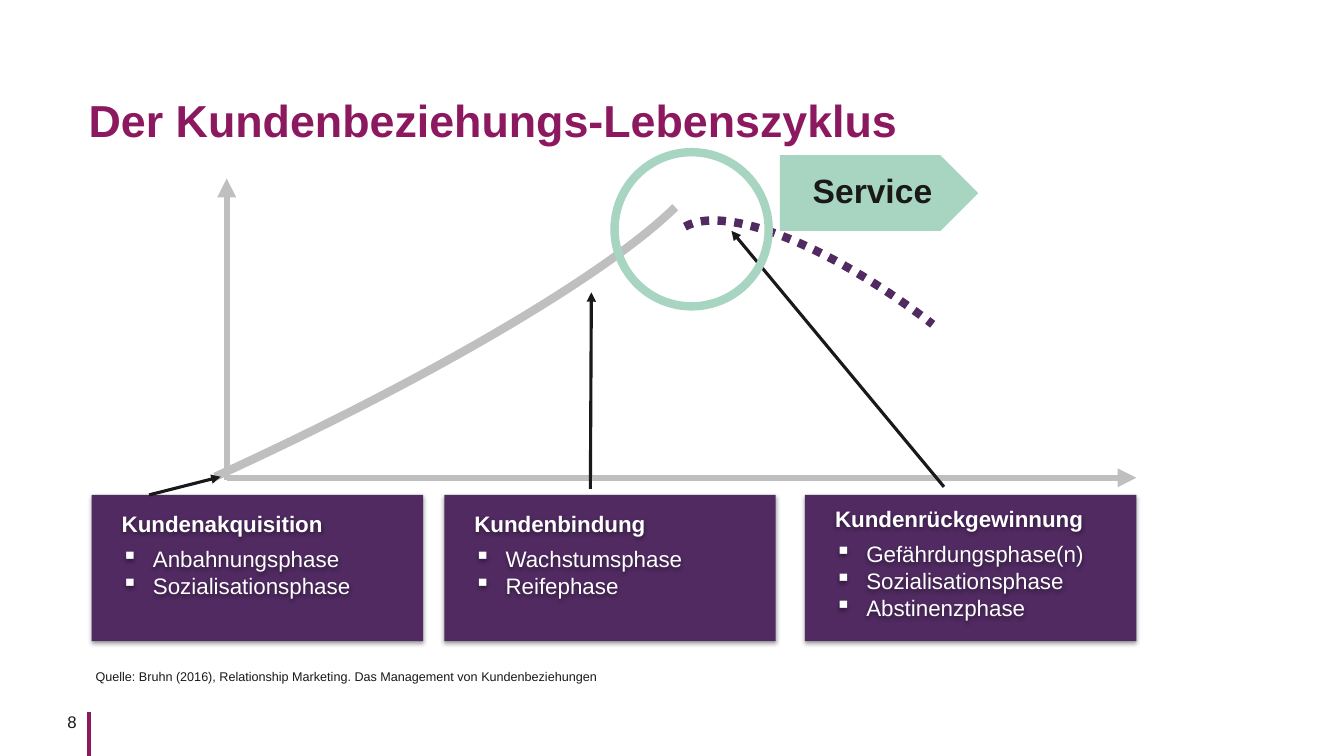
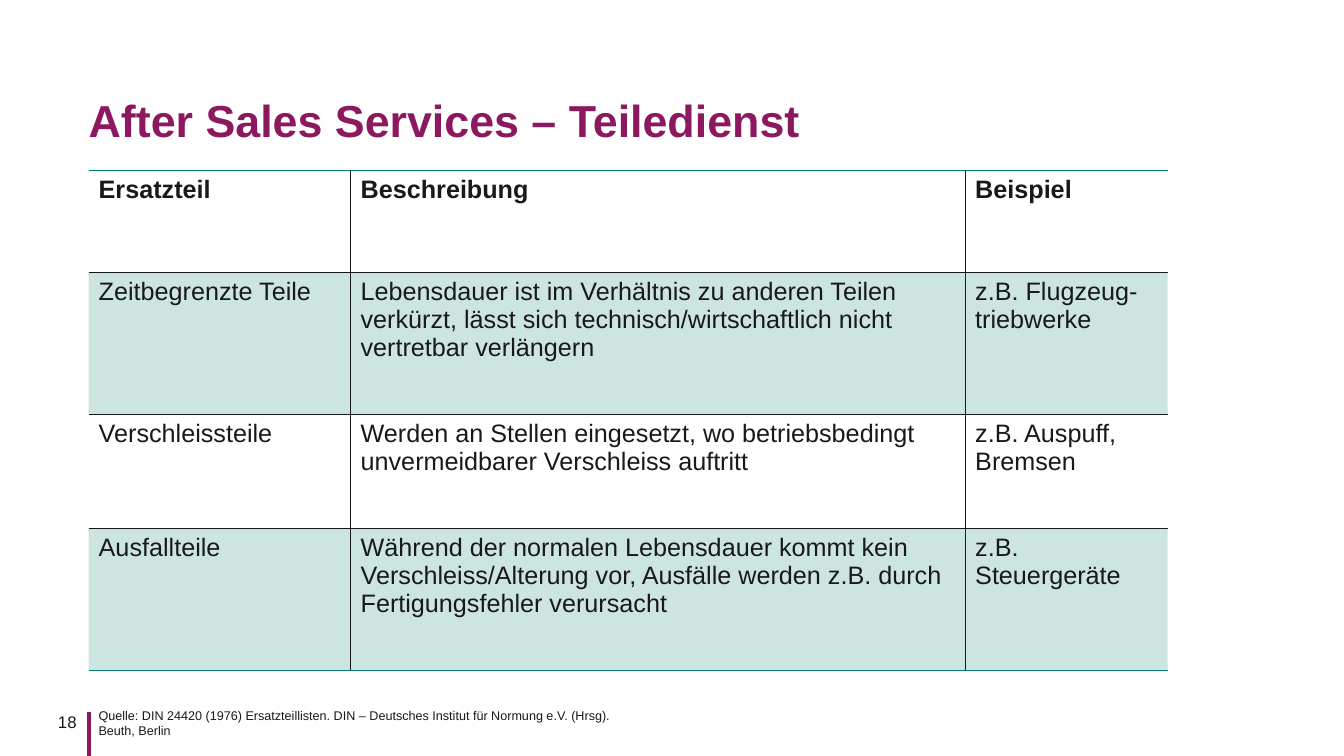
import pptx
import pptx.util
import pptx.dml.color
import pptx.enum.dml
import pptx.enum.shapes
import pptx.enum.text
import pptx.oxml
import pptx.oxml.ns

WIDTH, HEIGHT = 13.34, 7.5
COLUMN = ROW = pptx.util.Inches(1)
LEFT = 0.88
FONT = "Arial"
BERRY, PLUM, MINT, TEAL = "8C195F", "502A61", "A7D5C2", "007E6B"
INK, GREY, WHITE = "191919", "BFBFBF", "FFFFFF"
SHAPES = pptx.enum.shapes.MSO_SHAPE
ALIGN = pptx.enum.text.PP_ALIGN
ANCHOR = pptx.enum.text.MSO_ANCHOR
NO_INSETS = dict(margin_left=0, margin_top=0, margin_right=0, margin_bottom=0)

CARD_TOP, CARD_WIDTH, CARD_HEIGHT = 4.91, 3.29, 1.45
CARDS = [
    (0.91, 0.1, "Kundenakquisition", ["Anbahnungsphase", "Sozialisationsphase"]),
    (4.41, 0.1, "Kundenbindung", ["Wachstumsphase", "Reifephase"]),
    (7.99, 0.05, "Kundenrückgewinnung",
     ["Gefährdungsphase(n)", "Sozialisationsphase", "Abstinenzphase"]),
]
AXES = [((2.25, 4.74), (11.28, 4.74)), ((2.25, 4.76), (2.25, 1.77))]
POINTERS = [((1.48, 4.91), (2.19, 4.73)), ((5.86, 4.85), (5.87, 2.9)),
            ((9.37, 4.83), (7.26, 2.29))]
PARTS_COLUMNS = [2.6, 6.1, 2.01]
PARTS_ROWS = [1.01, 1.41, 1.13, 1.41]
PARTS = [
    ("Ersatzteil", "Beschreibung", "Beispiel"),
    ("Zeitbegrenzte Teile",
     "Lebensdauer ist im Verhältnis zu anderen Teilen verkürzt, lässt sich "
     "technisch/wirtschaftlich nicht vertretbar verlängern",
     "z.B. Flugzeug-triebwerke"),
    ("Verschleissteile",
     "Werden an Stellen eingesetzt, wo betriebsbedingt unvermeidbarer Verschleiss auftritt",
     "z.B. Auspuff, Bremsen"),
    ("Ausfallteile",
     "Während der normalen Lebensdauer kommt kein Verschleiss/Alterung vor, "
     "Ausfälle werden z.B. durch Fertigungsfehler verursacht",
     "z.B. Steuergeräte"),
]


def colour(value):
    """Return the colour of a hex string."""
    return pptx.dml.color.RGBColor.from_string(value)


def place(left, top, width, height):
    """Turn grid columns and rows into slide lengths."""
    return [round(left * COLUMN), round(top * ROW), round(width * COLUMN), round(height * ROW)]


def apply(target, **values):
    """Set every given format value on the target."""
    for name, value in values.items():
        setattr(target, name, value)


def add_xml(parent, markup):
    """Append a drawing element written without its namespace."""
    tag, _, rest = markup.partition(" ")
    element = pptx.oxml.parse_xml(f"<a:{tag} {pptx.oxml.ns.nsdecls('a')} {rest}")
    parent.append(element)
    return element


def write(para, text, size, ink=INK, bold=False, **values):
    """Put one formatted run of text into a paragraph."""
    apply(para, **values)
    span = para.add_run()
    span.text = text
    apply(span.font, name=FONT, size=pptx.util.Pt(size), bold=bold)
    span.font.color.rgb = colour(ink)


def add_text(page, at, **frame_values):
    """Add a wrapping text box."""
    box = page.shapes.add_textbox(*place(*at))
    apply(box.text_frame, word_wrap=True, **frame_values)
    return box


def add_figure(page, kind, at, fill=None, line=None, rotation=0, adjust=()):
    """Add a preset shape with a plain fill or a six point outline."""
    shape = page.shapes.add_shape(kind, *place(*at))
    apply(shape, rotation=rotation)
    shape.shadow.inherit = False
    for index, value in enumerate(adjust):
        shape.adjustments[index] = value
    if fill:
        shape.fill.solid()
        shape.fill.fore_color.rgb = colour(fill)
    else:
        shape.fill.background()
    if line:
        shape.line.color.rgb = colour(line)
        shape.line.width = pptx.util.Pt(6)
    else:
        shape.line.fill.background()
    return shape


def add_line(page, start, end, ink, weight, arrow=True):
    """Add a straight line, with an arrowhead at its end if wanted."""
    straight = pptx.enum.shapes.MSO_CONNECTOR.STRAIGHT
    line = page.shapes.add_connector(straight, *place(*start, *end))
    line.line.color.rgb = colour(ink)
    line.line.width = pptx.util.Pt(weight)
    if arrow:
        add_xml(line.line._get_or_add_ln(), 'tailEnd type="triangle"/>')
    add_xml(line._element.spPr, "effectLst />")


def add_shadow(shape):
    """Give a shape a soft shadow below it."""
    shape.shadow.inherit = False
    effects = shape._element.spPr.find(pptx.oxml.ns.qn("a:effectLst"))
    add_xml(effects, 'outerShdw blurRad="39370" dist="20320" dir="5400000" rotWithShape="0">'
                     '<a:srgbClr val="000000"><a:alpha val="38000"/></a:srgbClr></a:outerShdw>')


def add_page(deck, title, number):
    """Add a slide with its title, page number and footer mark."""
    page = deck.slides.add_slide(deck.slide_layouts[5])
    heading = page.shapes.title
    left, top, width, height = place(LEFT, 0.76, 12.09, 0.75)
    apply(heading, left=left, top=top, width=width, height=height)
    apply(heading.text_frame, vertical_anchor=ANCHOR.MIDDLE, word_wrap=True,
          auto_size=pptx.enum.text.MSO_AUTO_SIZE.NONE, **NO_INSETS)
    write(heading.text_frame.paragraphs[0], title, 32, BERRY, True,
          alignment=ALIGN.LEFT, line_spacing=1.2)
    add_line(page, (LEFT, 7.06), (LEFT, HEIGHT), BERRY, 3, arrow=False)
    insets = {**NO_INSETS, "margin_right": round(0.12 * COLUMN)}
    box = add_text(page, (0.29, 7.06, 0.59, 0.2), **insets)
    write(box.text_frame.paragraphs[0], number, 12, alignment=ALIGN.RIGHT)
    return page


def add_source(page, at, lines):
    """Add the small source note."""
    frame = add_text(page, at, auto_size=pptx.enum.text.MSO_AUTO_SIZE.SHAPE_TO_FIT_TEXT).text_frame
    for index, line in enumerate(lines):
        write(frame.add_paragraph() if index else frame.paragraphs[0], line, 9)


def add_card(page, left, offset, heading, phases):
    """Add a phase card with a heading and bullets."""
    add_shadow(add_figure(page, SHAPES.RECTANGLE, (left, CARD_TOP, CARD_WIDTH, CARD_HEIGHT), PLUM))
    box = add_text(page, (left + 0.2, CARD_TOP + offset, 2.71, 1.28))
    add_shadow(box)
    write(box.text_frame.paragraphs[0], heading, 16, WHITE, True, space_after=pptx.util.Pt(6))
    for phase in phases:
        para = box.text_frame.add_paragraph()
        properties = para._p.get_or_add_pPr()
        indent = round(0.31 * COLUMN)
        properties.set("marL", str(indent))
        properties.set("indent", str(-indent))
        add_xml(properties, 'buChar char="▪"/>')
        write(para, phase, 16, WHITE)


def add_borders(cell, edges):
    """Draw the given cell edges and hide the others."""
    properties = cell._tc.get_or_add_tcPr()
    for side in "LRTB":
        ink = edges.get(side)
        paint = f'<a:solidFill><a:srgbClr val="{ink}"/></a:solidFill>' if ink else "<a:noFill/>"
        add_xml(properties, f'ln{side} w="12700">{paint}</a:ln{side}>')


def add_parts_table(page):
    """Add the spare parts table with tinted alternate rows."""
    at = (LEFT, 1.69, sum(PARTS_COLUMNS), sum(PARTS_ROWS))
    table = page.shapes.add_table(len(PARTS), len(PARTS_COLUMNS), *place(*at)).table
    apply(table, first_row=False, horz_banding=False)
    for column, width in zip(table.columns, PARTS_COLUMNS):
        column.width = round(width * COLUMN)
    last_row, last_column = len(PARTS) - 1, len(PARTS_COLUMNS) - 1
    for r, texts in enumerate(PARTS):
        table.rows[r].height = round(PARTS_ROWS[r] * ROW)
        for c, text in enumerate(texts):
            cell = table.cell(r, c)
            add_borders(cell, {"L": INK if c else None,
                               "R": INK if c < last_column else None,
                               "T": INK if r else TEAL,
                               "B": INK if r < last_row else TEAL})
            if r % 2:
                cell.fill.solid()
                cell.fill.fore_color.rgb = colour(TEAL)
                tint = next(cell._tc.tcPr.find(pptx.oxml.ns.qn("a:solidFill")).iterchildren())
                add_xml(tint, 'alpha val="20000"/>')
            else:
                cell.fill.background()
            write(cell.text_frame.paragraphs[0], text, 18, bold=r == 0)


def add_lifecycle(page):
    """Draw the life cycle curve, its phases and the service marker."""
    for card in CARDS:
        add_card(page, *card)
    for start, end in AXES:
        add_line(page, start, end, GREY, 4.5)
    add_figure(page, SHAPES.ARC, (0.89, -1.78, 1.76, 11.42), line=GREY,
               rotation=65.5, adjust=(164.22, 0))
    decline = add_figure(page, SHAPES.ARC, (7.9, 1.32, 1.76, 5.28), line=PLUM,
                         rotation=308.2, adjust=(163.57, 212.74))
    decline.line.dash_style = pptx.enum.dml.MSO_LINE.ROUND_DOT
    for start, end in POINTERS:
        add_line(page, start, end, INK, 2.25)
    add_figure(page, SHAPES.OVAL, (6.1, 1.51, 1.53, 1.53), line=MINT)
    service = add_figure(page, SHAPES.PENTAGON, (7.74, 1.54, 1.97, 0.75), MINT)
    slim = round(0.04 * COLUMN)
    apply(service.text_frame, vertical_anchor=ANCHOR.MIDDLE, margin_left=round(0.1 * COLUMN),
          margin_top=slim, margin_right=slim, margin_bottom=slim)
    write(service.text_frame.paragraphs[0], "Service", 24, bold=True,
          alignment=ALIGN.CENTER, line_spacing=0.9)


def main():
    """Build and save the deck."""
    deck = pptx.Presentation()
    apply(deck, slide_width=round(WIDTH * COLUMN), slide_height=round(HEIGHT * ROW))
    page = add_page(deck, "Der Kundenbeziehungs-Lebenszyklus", "8")
    add_lifecycle(page)
    add_source(page, (0.85, 6.59, 7.39, 0.25),
               ["Quelle: Bruhn (2016), Relationship Marketing. "
                "Das Management von Kundenbeziehungen"])
    page = add_page(deck, "After Sales Services – Teiledienst", "18")
    add_parts_table(page)
    add_source(page, (LEFT, 6.97, 6.67, 0.4),
               ["Quelle: DIN 24420 (1976) Ersatzteillisten. "
                "DIN – Deutsches Institut für Normung e.V. (Hrsg).",
                "Beuth, Berlin"])
    deck.save("out.pptx")


if __name__ == "__main__":
    main()
